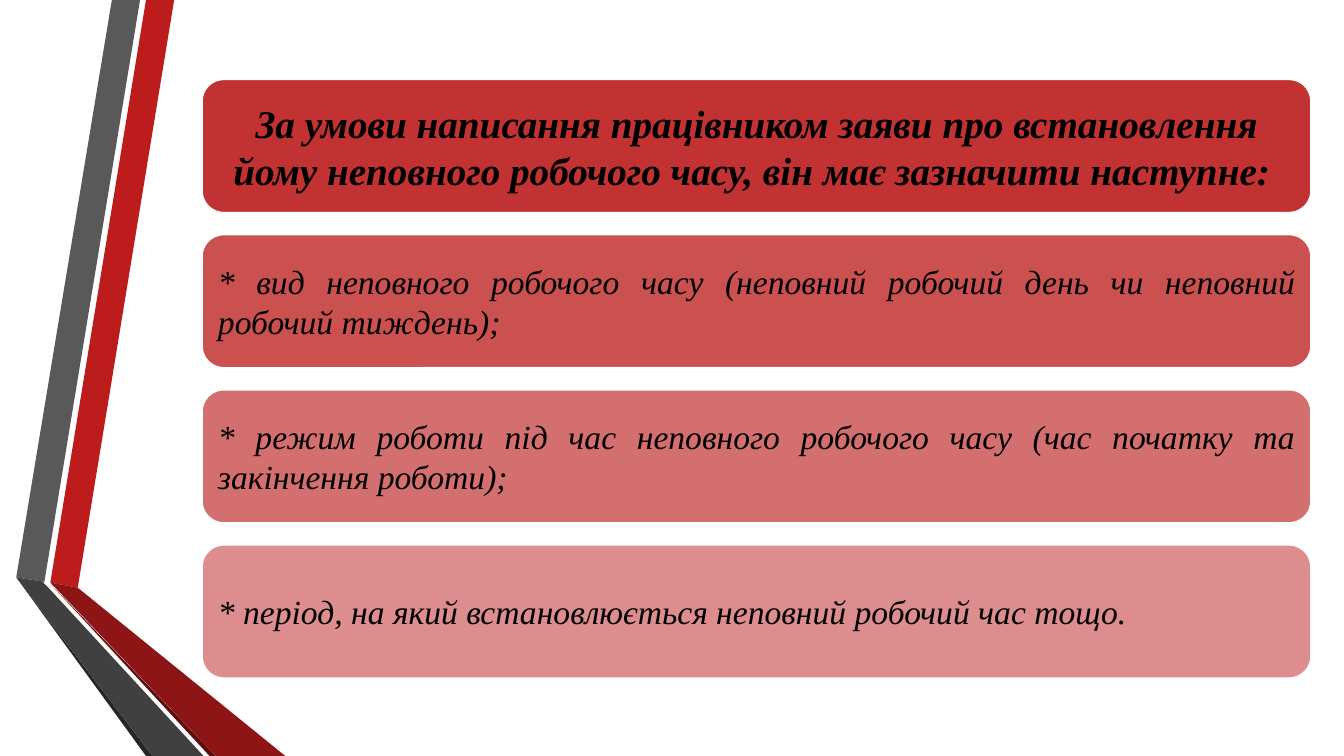
from lxml import etree
from pptx import Presentation
from pptx.dml.color import RGBColor
from pptx.enum.shapes import MSO_SHAPE
from pptx.enum.text import MSO_ANCHOR, PP_ALIGN
from pptx.oxml.ns import qn
from pptx.util import Cm, Pt

ROUNDED = MSO_SHAPE.ROUNDED_RECTANGLE
MIDDLE = MSO_ANCHOR.MIDDLE
CENTER, JUSTIFY = PP_ALIGN.CENTER, PP_ALIGN.JUSTIFY

FONT = "Times New Roman"
RED, WHITE, BLACK = "BC1C1C", "FFFFFF", "000000"
PAGE_WIDTH, PAGE_HEIGHT = 33.87, 19.05
BOX_LEFT, BOX_TOP, BOX_WIDTH, BOX_HEIGHT, BOX_PITCH = 5.08, 1.99, 27.97, 3.38, 3.91

# Fill and corner points in centimetres, from back to front
RIBBONS = [
    (RED, [(1.27, 14.68), (1.96, 14.81), (4.39, 0), (3.68, 0)]),
    ("595959", [(3.53, 0), (2.82, 0), (0.41, 14.55), (1.12, 14.66)]),
    ("262626", [(0.41, 14.55), (3.68, PAGE_HEIGHT), (3.84, PAGE_HEIGHT)]),
    ("5E0E0E", [(1.27, 14.71), (5.28, PAGE_HEIGHT), (5.44, PAGE_HEIGHT)]),
    ("8D1515", [(1.27, 14.68), (5.44, PAGE_HEIGHT), (7.19, PAGE_HEIGHT), (1.96, 14.81)]),
    ("404040", [(5.13, PAGE_HEIGHT), (1.22, 14.81), (1.09, 14.68), (1.12, 14.66),
                (0.41, 14.55), (3.84, PAGE_HEIGHT)]),
]

HEADING = ("За умови написання працівником заяви про встановлення "
           "йому неповного робочого часу, він має зазначити наступне: ")
# Text and fill opacity in percent
ITEMS = [
    ("* вид неповного робочого часу (неповний робочий день чи неповний робочий тиждень);", 77),
    ("* режим роботи під час неповного робочого часу (час початку та закінчення роботи);", 63),
    ("* період, на який встановлюється неповний робочий час тощо. ", 50),
]


def color(value):
    return RGBColor.from_string(value)


def fill_shape(shape, value, opacity=100):
    shape.shadow.inherit = False
    shape.fill.solid()
    shape.fill.fore_color.rgb = color(value)
    if opacity < 100:
        tint = shape.fill._xPr.find(".//" + qn("a:srgbClr"))
        etree.SubElement(tint, qn("a:alpha"), val=str(opacity * 1000))


def add_ribbon(page, value, points):
    corners = [(Cm(x), Cm(y)) for x, y in points]
    builder = page.shapes.build_freeform(*corners[0])
    builder.add_line_segments(corners[1:], close=True)
    ribbon = builder.convert_to_shape()
    fill_shape(ribbon, value)
    ribbon.line.fill.background()


def add_box(page, row, text, opacity, size=24, inset=0.25, align=JUSTIFY, bold=False):
    box = page.shapes.add_shape(ROUNDED, Cm(BOX_LEFT), Cm(BOX_TOP + row * BOX_PITCH),
                                Cm(BOX_WIDTH), Cm(BOX_HEIGHT))
    fill_shape(box, RED, opacity)
    box.line.color.rgb = color(WHITE)
    box.line.width = Pt(1.75)

    frame = box.text_frame
    frame.word_wrap = True
    frame.vertical_anchor = MIDDLE
    frame.margin_left = frame.margin_right = Cm(inset)
    frame.margin_top = frame.margin_bottom = Cm(inset)
    para = frame.paragraphs[0]
    para.text = text
    para.alignment = align
    para.font.name = FONT
    para.font.size = Pt(size)
    para.font.bold = bold
    para.font.italic = True
    para.font.color.rgb = color(BLACK)


def main():
    deck = Presentation()
    deck.slide_width, deck.slide_height = Cm(PAGE_WIDTH), Cm(PAGE_HEIGHT)
    page = deck.slides.add_slide(deck.slide_layouts[6])
    for value, points in RIBBONS:
        add_ribbon(page, value, points)
    add_box(page, 0, HEADING, 90, size=28, inset=0.3, align=CENTER, bold=True)
    for row, (text, opacity) in enumerate(ITEMS, start=1):
        add_box(page, row, text, opacity)
    deck.save("out.pptx")


if __name__ == "__main__":
    main()
